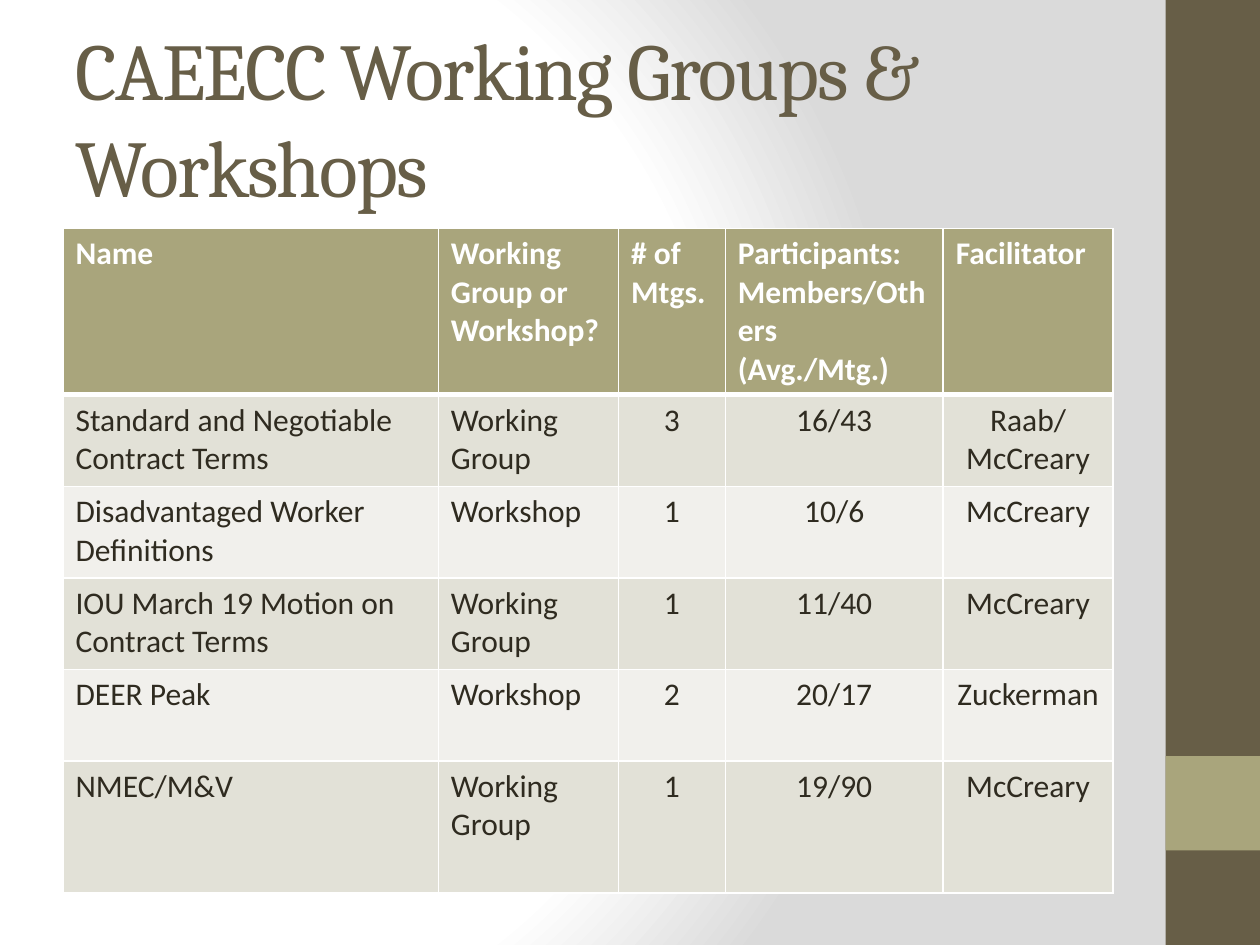
import dataclasses

import pptx
import pptx.dml.color
import pptx.enum.shapes
import pptx.enum.text
import pptx.oxml
import pptx.oxml.ns
import pptx.util

Pt = pptx.util.Pt
Align = pptx.enum.text.PP_ALIGN


def rgb(value):
    return pptx.dml.color.RGBColor.from_string(value)


@dataclasses.dataclass(frozen=True)
class Theme:
    dark: str = "675E47"
    accent: str = "A9A57C"
    text: str = "2F2B20"
    white: str = "FFFFFF"
    shade: str = "DADADA"
    bands: tuple = ("E2E1D7", "F1F0EC")
    title_font: str = "Cambria"
    body_font: str = "Calibri"
    title_size: int = 46
    body_size: int = 18


class SlideBuilder:
    def __init__(self, presentation, theme):
        self.theme = theme
        self.slide = presentation.slides.add_slide(presentation.slide_layouts[5])

    def background(self):
        fill = self.slide.background.fill
        fill.gradient()
        gradient = self.slide._element.find(".//" + pptx.oxml.ns.qn("a:gradFill"))
        stops = "".join(
            f'<a:gs pos="{position * 1000}"><a:srgbClr val="{color}"/></a:gs>'
            for position, color in (
                (0, self.theme.white), (75, self.theme.white), (100, self.theme.shade)
            )
        )
        replacement = pptx.oxml.parse_xml(
            f'<a:gradFill {pptx.oxml.ns.nsdecls("a")} rotWithShape="1">'
            f'<a:gsLst>{stops}</a:gsLst><a:path path="circle">'
            '<a:fillToRect l="20000" t="50000" r="100000" b="50000"/>'
            '</a:path></a:gradFill>'
        )
        gradient.getparent().replace(gradient, replacement)

    def rectangle(self, left, top, width, height, color):
        shape = self.slide.shapes.add_shape(
            pptx.enum.shapes.MSO_SHAPE.RECTANGLE, Pt(left), Pt(top), Pt(width), Pt(height)
        )
        shape.shadow.inherit = False
        shape.fill.solid()
        shape.fill.fore_color.rgb = rgb(color)
        shape.line.fill.background()

    def style(self, paragraph, font, size, color, bold=False, alignment=Align.LEFT):
        paragraph.alignment = alignment
        paragraph.font.name = font
        paragraph.font.size = Pt(size)
        paragraph.font.bold = bold
        paragraph.font.color.rgb = rgb(color)

    def title(self, text, left, top, width, height):
        shape = self.slide.shapes.title
        shape.left, shape.top = Pt(left), Pt(top)
        shape.width, shape.height = Pt(width), Pt(height)
        frame = shape.text_frame
        frame.text = text
        frame.word_wrap = True
        frame.auto_size = pptx.enum.text.MSO_AUTO_SIZE.NONE
        frame.vertical_anchor = pptx.enum.text.MSO_ANCHOR.MIDDLE
        paragraph = frame.paragraphs[0]
        self.style(paragraph, self.theme.title_font, self.theme.title_size, self.theme.dark)
        paragraph.runs[0]._r.get_or_add_rPr().set("spc", "-100")

    def borders(self, cell, top, bottom):
        properties = cell._tc.get_or_add_tcPr()
        for side, width in (("L", 1), ("R", 1), ("T", top), ("B", bottom)):
            properties.append(pptx.oxml.parse_xml(
                f'<a:ln{side} {pptx.oxml.ns.nsdecls("a")} w="{Pt(width)}"><a:solidFill>'
                f'<a:srgbClr val="{self.theme.white}"/></a:solidFill></a:ln{side}>'
            ))

    def cell(self, cell, text, row, column):
        header = row == 0
        self.borders(cell, 3 if row == 1 else 1, 3 if header else 1)
        cell.fill.solid()
        cell.fill.fore_color.rgb = rgb(
            self.theme.accent if header else self.theme.bands[(row - 1) % 2]
        )
        cell.text = text
        self.style(
            cell.text_frame.paragraphs[0], self.theme.body_font, self.theme.body_size,
            self.theme.white if header else self.theme.text, header,
            Align.CENTER if column >= 2 and not header else Align.LEFT,
        )

    def table(self, rows, left, top, height, column_widths, row_heights):
        shape = self.slide.shapes.add_table(
            len(rows), len(column_widths), Pt(left), Pt(top),
            Pt(sum(column_widths)), Pt(height),
        )
        table = shape.table
        for column, width in zip(table.columns, column_widths):
            column.width = Pt(width)
        for row, row_height in zip(table.rows, row_heights):
            row.height = Pt(row_height)
        shape.height = Pt(height)
        for row, values in enumerate(rows):
            for column, text in enumerate(values):
                self.cell(table.cell(row, column), text, row, column)


def main():
    theme = Theme()
    presentation = pptx.Presentation()
    presentation.slide_width, presentation.slide_height = Pt(720), Pt(540)
    builder = SlideBuilder(presentation, theme)
    builder.background()
    builder.rectangle(666, 0, 54, 540, theme.dark)
    builder.rectangle(666, 432, 54, 54, theme.accent)
    builder.title("CAEECC Working Groups & Workshops", 36, 21.6, 600, 90)
    builder.table(
        [
            ("Name", "Working Group or Workshop?", "# of Mtgs.",
             "Participants: Members/Others (Avg./Mtg.)", "Facilitator"),
            ("Standard and Negotiable Contract Terms", "Working Group", "3",
             "16/43", "Raab/McCreary"),
            ("Disadvantaged Worker Definitions", "Workshop", "1", "10/6", "McCreary"),
            ("IOU March 19 Motion on Contract Terms", "Working Group", "1",
             "11/40", "McCreary"),
            ("DEER Peak", "Workshop", "2", "20/17", "Zuckerman"),
            ("NMEC/M&V", "Working Group", "1", "19/90", "McCreary"),
        ],
        36, 130.5, 379, (214.5, 103, 61, 124.5, 97), (47.5, 52.3, 52.3, 52.3, 52.3, 75.6),
    )
    presentation.save("out.pptx")


if __name__ == "__main__":
    main()
